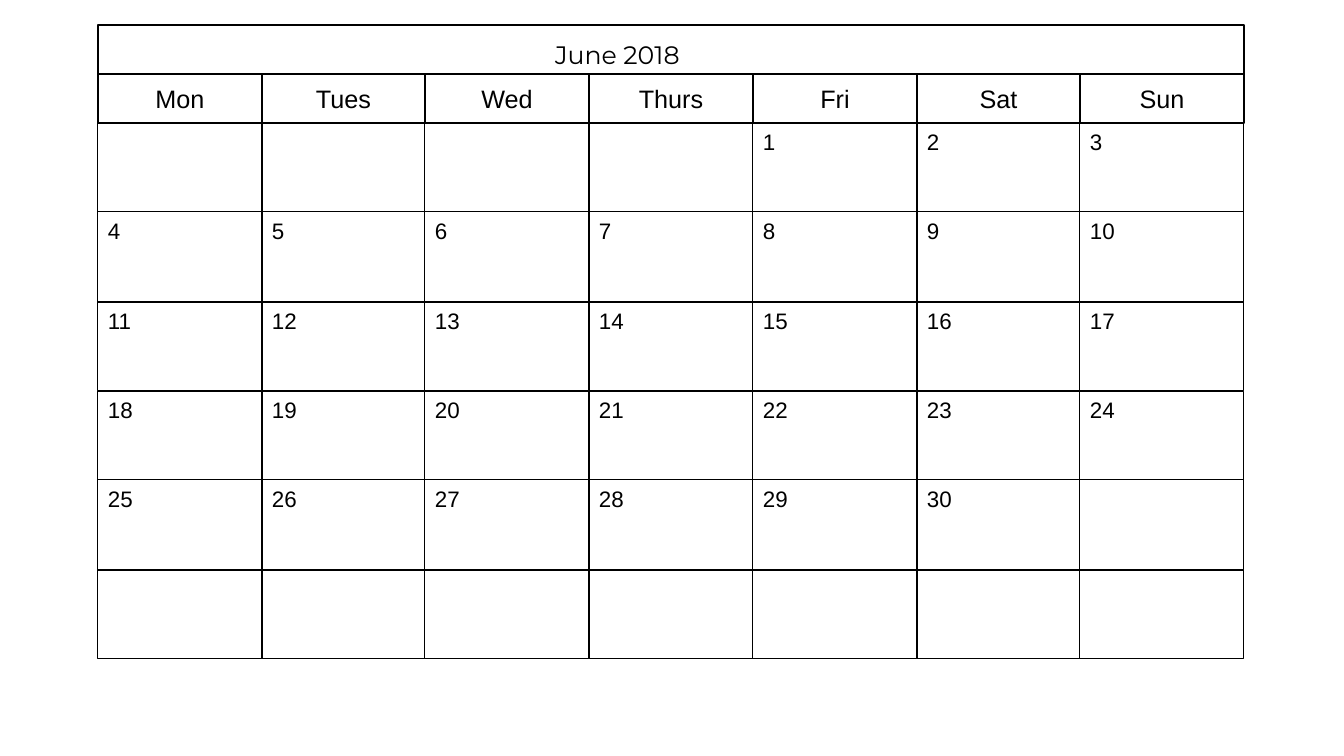
from dataclasses import dataclass

from pptx import Presentation
from pptx import util as u
from pptx.dml.color import RGBColor
from pptx.enum import shapes, text

SCALE = 12192000 / 1344  # EMU per px

SLIDE_W, SLIDE_H = 1344, 756
LEFT, WIDTH = 98, 1146
BAND_TOP, HEADER_TOP, WEEKS_TOP, BOTTOM = 25, 74, 123, 659

MONTH = "June 2018"
WEEKDAYS = ["Mon", "Tues", "Wed", "Thurs", "Fri", "Sat", "Sun"]
WEEKS, FIRST_COLUMN, DAYS = 6, 4, 30


@dataclass(frozen=True)
class Theme:
    paper: RGBColor = RGBColor(255, 255, 255)
    ink: RGBColor = RGBColor(0, 0, 0)
    title_font: str = "Montserrat"
    body_font: str = "Arial"
    heading_size: float = 18
    date_size: float = 16
    heavy_line: float = 1
    thin_line: float = 0.75


def px(n):
    return u.Emu(round(n * SCALE))


def edges(start, end, count):
    """Whole-px boundaries of count equal parts."""
    return [round(start + (end - start) * i / count) for i in range(count + 1)]


class Calendar:
    def __init__(self, theme):
        self.theme = theme
        self.prs = Presentation()
        self.prs.slide_width, self.prs.slide_height = px(SLIDE_W), px(SLIDE_H)
        self.s = self.prs.slides.add_slide(self.prs.slide_layouts[5])

    def label(self, sp, words, size, font, align, **frame):
        tf = sp.text_frame
        tf.text = words
        for name, value in frame.items():
            setattr(tf, name, value)
        p = tf.paragraphs[0]
        p.alignment = align
        for name, value in {"size": u.Pt(size), "name": font}.items():
            setattr(p.runs[0].font, name, value)
        p.runs[0].font.color.rgb = self.theme.ink

    def box(self, x, y, w, h, line):
        sp = self.s.shapes.add_shape(
            shapes.MSO_SHAPE.RECTANGLE, px(x), px(y), px(w), px(h))
        sp.shadow.inherit = False
        sp.fill.solid()
        sp.fill.fore_color.rgb = self.theme.paper
        sp.line.color.rgb = self.theme.ink
        sp.line.width = u.Pt(line)
        return sp

    def title(self, words, x, y, w, h):
        sp = self.s.shapes.title
        for name, value in {"left": x, "top": y, "width": w, "height": h}.items():
            setattr(sp, name, px(value))
        sp.fill.solid()
        sp.fill.fore_color.rgb = self.theme.paper
        self.label(sp, words, self.theme.heading_size, self.theme.title_font,
                   text.PP_ALIGN.LEFT, word_wrap=False,
                   vertical_anchor=text.MSO_ANCHOR.TOP,
                   auto_size=text.MSO_AUTO_SIZE.SHAPE_TO_FIT_TEXT)

    def band(self, x, y, w, h):
        """Frame behind the title."""
        sp = self.box(x, y, w, h, self.theme.heavy_line)
        self.s.shapes.title._element.addprevious(sp._element)

    def weekday(self, words, x, y, w, h):
        sp = self.box(x, y, w, h, self.theme.heavy_line)
        self.label(sp, words, self.theme.heading_size, self.theme.body_font,
                   text.PP_ALIGN.CENTER, word_wrap=True,
                   vertical_anchor=text.MSO_ANCHOR.MIDDLE,
                   margin_top=px(2), margin_bottom=px(2))

    def day(self, date, x, y, w, h):
        sp = self.box(x, y, w, h, self.theme.thin_line)
        if 1 <= date <= DAYS:
            self.label(sp, str(date), self.theme.date_size, self.theme.body_font,
                       text.PP_ALIGN.LEFT, word_wrap=True,
                       vertical_anchor=text.MSO_ANCHOR.TOP)


def main():
    cal = Calendar(Theme())
    cal.title(MONTH, 545, 34, 164, 40)
    cal.band(LEFT, BAND_TOP, WIDTH, HEADER_TOP - BAND_TOP)

    xs = edges(LEFT, LEFT + WIDTH, len(WEEKDAYS))
    ys = edges(WEEKS_TOP, BOTTOM, WEEKS)
    for col, name in enumerate(WEEKDAYS):
        x, w = xs[col], xs[col + 1] - xs[col]
        cal.weekday(name, x, HEADER_TOP, w, WEEKS_TOP - HEADER_TOP)
        for week in range(WEEKS):
            date = week * len(WEEKDAYS) + col - FIRST_COLUMN + 1
            cal.day(date, x, ys[week], w, ys[week + 1] - ys[week])

    cal.prs.save("out.pptx")


if __name__ == "__main__":
    main()
